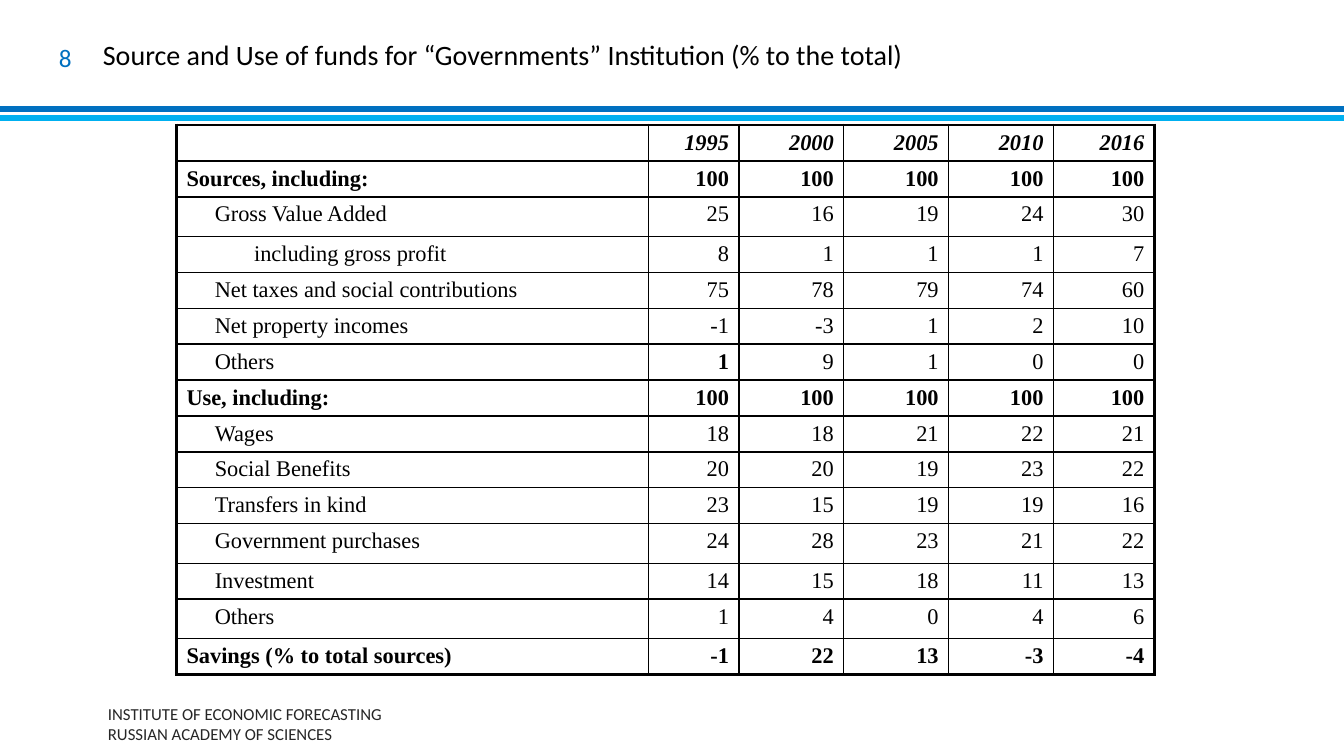
from lxml.etree import SubElement
from pptx import Presentation
from pptx.dml.color import RGBColor
from pptx.enum.shapes import MSO_CONNECTOR
from pptx.enum.text import MSO_ANCHOR, PP_ALIGN
from pptx.oxml.ns import qn
from pptx.util import Inches, Pt

COLORS = {"blue": "0070C0", "sky": "00B0F0", "black": "000000", "gray": "262626"}


def add_run(para, text, size, color, font="Calibri"):
    run = para.add_run()
    run.text = text
    run.font.size = Pt(size)
    run.font.name = font
    run.font.color.rgb = RGBColor.from_string(COLORS[color])
    return run


def add_text(slide, place, lines, size, color, align=PP_ALIGN.LEFT, inset=0):
    frame = slide.shapes.add_textbox(*[Inches(n) for n in place]).text_frame
    frame.word_wrap = True
    frame.vertical_anchor = MSO_ANCHOR.MIDDLE
    frame.margin_left = frame.margin_right = Inches(inset)
    frame.margin_top = frame.margin_bottom = Inches(inset / 2)
    for i, line in enumerate(lines):
        para = frame.add_paragraph() if i else frame.paragraphs[0]
        para.alignment = align
        add_run(para, line, size, color)


deck = Presentation()
deck.slide_width, deck.slide_height = Inches(13.33), Inches(7.5)
slide = deck.slides.add_slide(deck.slide_layouts[6])

# Double rule under the title
for y, color in [(1.08, "blue"), (1.17, "sky")]:
    rule = slide.shapes.add_connector(
        MSO_CONNECTOR.STRAIGHT, 0, Inches(y), Inches(13.33), Inches(y))
    rule.line.color.rgb = RGBColor.from_string(COLORS[color])
    rule.line.width = Pt(4)
    SubElement(rule._element.spPr, qn("a:effectLst"))

# Footer, title and page number
add_text(slide, (1.07, 6.98, 4.59, 0.4),
         ["INSTITUTE OF ECONOMIC FORECASTING", "RUSSIAN ACADEMY OF SCIENCES"], 12, "gray")
add_text(slide, (1.02, 0, 10.88, 1.08),
         ["Source and Use of funds for “Governments” Institution (% to the total)"], 20, "black")
add_text(slide, (0.2, 0.37, 0.61, 0.4), ["8"], 18, "blue", PP_ALIGN.RIGHT, 0.1)

# Table data: indent level, label, values
ROWS = [
    (0, "", "1995 2000 2005 2010 2016"),
    (0, "Sources, including:", "100 100 100 100 100"),
    (1, "Gross Value Added", "25 16 19 24 30"),
    (2, "including gross profit", "8 1 1 1 7"),
    (1, "Net taxes and social contributions", "75 78 79 74 60"),
    (1, "Net property incomes", "-1 -3 1 2 10"),
    (1, "Others", "1 9 1 0 0"),
    (0, "Use, including:", "100 100 100 100 100"),
    (1, "Wages", "18 18 21 22 21"),
    (1, "Social Benefits", "20 20 19 23 22"),
    (1, "Transfers in kind", "23 15 19 19 16"),
    (1, "Government purchases", "24 28 23 21 22"),
    (1, "Investment", "14 15 18 11 13"),
    (1, "Others", "1 4 0 4 6"),
    (0, "Savings (% to total sources)", "-1 22 13 -3 -4"),
]
WIDTHS = [4.68, 0.9, 1.04, 1.04, 1.04, 1]
INDENTS = [0, 0.28, 0.67]
TALL = {0: 0.33, 2: 0.39, 11: 0.39, 13: 0.39}
last_row, last_col = len(ROWS) - 1, len(WIDTHS) - 1

table = slide.shapes.add_table(len(ROWS), len(WIDTHS), Inches(1.75), Inches(1.24),
                               Inches(9.7), Inches(4.36)).table
table.first_row = table.horz_banding = False
for col, width in zip(table.columns, WIDTHS):
    col.width = Inches(width)

for r, (level, label, values) in enumerate(ROWS):
    table.rows[r].height = Inches(TALL.get(r, 0.26))
    for c, text in enumerate([label] + values.split()):
        cell = table.cell(r, c)
        cell.margin_top, cell.margin_bottom = Inches(0.05), Inches(0.04)
        cell.fill.background()

        # Cell text
        para = cell.text_frame.paragraphs[0]
        para.alignment = PP_ALIGN.RIGHT if c else PP_ALIGN.LEFT
        if c == 0 and level:
            para._p.get_or_add_pPr().set("marL", str(Inches(INDENTS[level])))
        if text:
            run = add_run(para, text, 16, "black", "Times New Roman")
            run.font.bold = level == 0 or (r, c) == (6, 1)
            run.font.italic = r == 0
        else:
            SubElement(para._p, qn("a:endParaRPr"), sz="1600")

        # Cell borders: thick on the outer edge
        props = cell._tc.get_or_add_tcPr()
        edges = [("L", c == 0), ("R", c == last_col), ("T", r == 0), ("B", r == last_row)]
        for i, (side, outer) in enumerate(edges):
            line = SubElement(props, qn("a:ln" + side), w=str(Pt(2.25 if outer else 1)))
            fill = SubElement(line, qn("a:solidFill"))
            SubElement(fill, qn("a:srgbClr"), val=COLORS["black"])
            props.insert(i, line)

deck.save("out.pptx")
